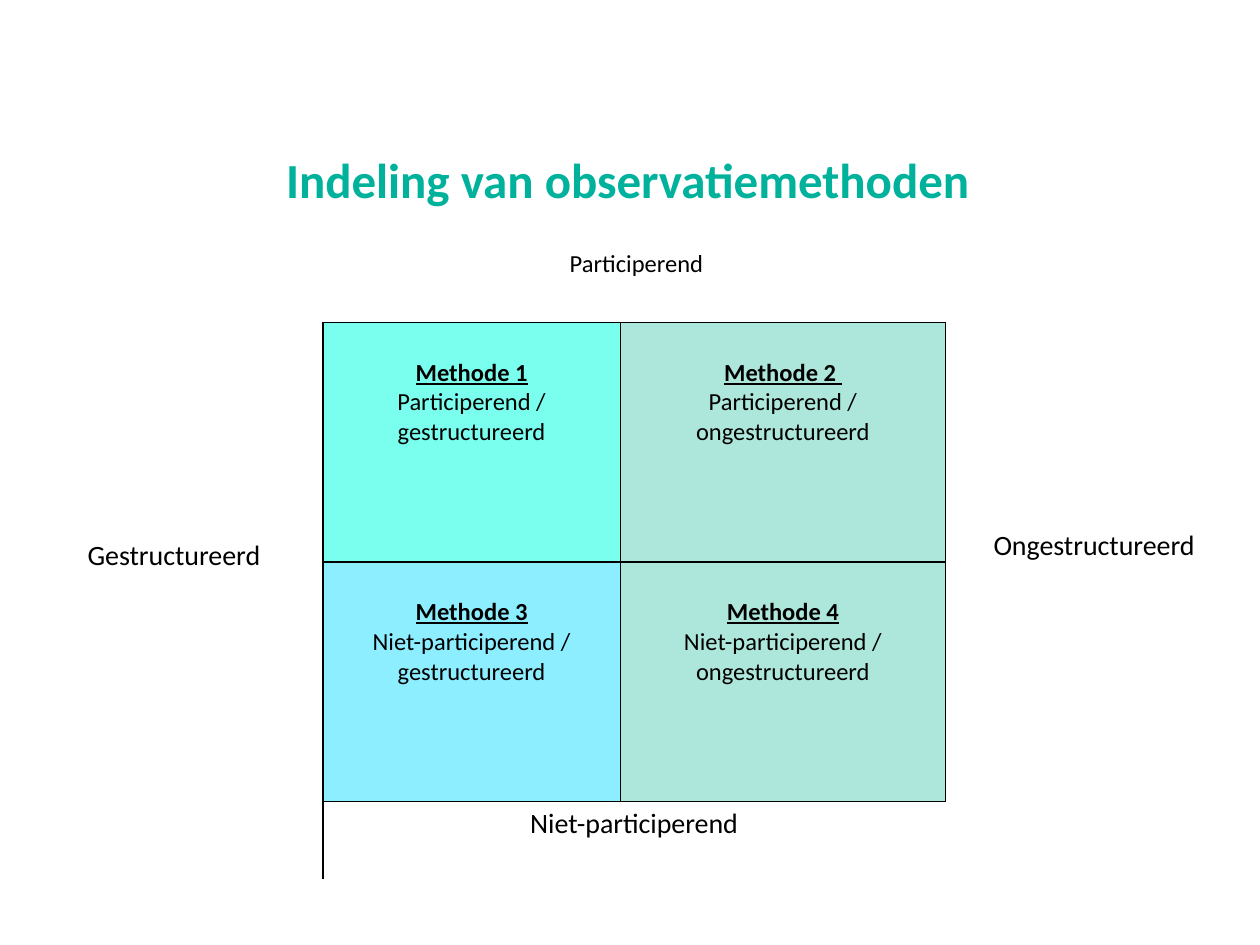
"""Build a slide with a two-by-two grid of observation methods."""
import pptx
import pptx.util
import pptx.dml.color
import pptx.enum.text
import pptx.oxml

Inches, Pt = pptx.util.Inches, pptx.util.Pt
ALIGN, ANCHOR = pptx.enum.text.PP_ALIGN, pptx.enum.text.MSO_ANCHOR
PLAIN = "{2D5ABB26-0587-4C30-8999-92F81FD0307C}"
LINE = (
    '<a:ln{0} xmlns:a="http://schemas.openxmlformats.org/drawingml/2006/main" w="12700">'
    '<a:solidFill><a:srgbClr val="000000"/></a:solidFill></a:ln{0}>'
)
METHODS = {
    (1, 1): ("Methode 1", "Participerend / gestructureerd", "7AFFEF", "LRTB"),
    (1, 2): ("Methode 2 ", "Participerend / ongestructureerd", "ADE6DA", "LTB"),
    (2, 1): ("Methode 3", "Niet-participerend / gestructureerd", "8DEEFF", "LRTB"),
    (2, 2): ("Methode 4", "Niet-participerend / ongestructureerd", "ADE6DA", "LTB"),
}


def color(code):
    """Turn a hex string into a colour."""
    return pptx.dml.color.RGBColor.from_string(code)


def apply(target, values):
    """Set attributes from a dict."""
    for name, value in values.items():
        setattr(target, name, value)


class Deck:
    """Hold the style and the current slide."""

    def __init__(self):
        """Start a deck with one titled slide."""
        self.show = pptx.Presentation()
        apply(self.show, {"slide_width": Inches(10), "slide_height": Inches(7.5)})
        self.slide = self.show.slides.add_slide(self.show.slide_layouts[5])

    def text(self, para, words, size, align=ALIGN.CENTER, ink="000000", **more):
        """Fill one formatted paragraph."""
        para.alignment = align
        run = para.add_run()
        run.text = words
        apply(run.font, {"name": "Calibri", "size": Pt(size), **more})
        run.font.color.rgb = color(ink)

    def title(self, words, left, top, width, height):
        """Place and fill the title."""
        box = self.slide.shapes.title
        apply(box, {"left": Inches(left), "top": Inches(top),
                    "width": Inches(width), "height": Inches(height)})
        apply(box.text_frame, {"vertical_anchor": ANCHOR.BOTTOM, "word_wrap": True})
        self.text(box.text_frame.paragraphs[0], words, 28, ALIGN.LEFT, "00B29C", bold=True)

    def table(self, left, top, width, rows, cols):
        """Add an unstyled table with equal columns."""
        table = self.slide.shapes.add_table(
            len(rows), cols, Inches(left), Inches(top), Inches(width), Inches(sum(rows))
        ).table
        table._tbl.tblPr[0].text = PLAIN
        apply(table, {"first_row": False, "horz_banding": False})
        for col in table.columns:
            col.width = Inches(width / cols)
        for row, height in zip(table.rows, rows):
            row.height = Inches(height)
        return table

    def cell(self, cell, edges="", fill=None, **pads):
        """Set the margins, borders and fill of a cell."""
        sides = {"left": 0.07, "right": 0.07, "top": 0.04, "bottom": 0.04, **pads}
        apply(cell, {f"margin_{side}": Inches(pad) for side, pad in sides.items()})
        for edge in edges:
            cell._tc.get_or_add_tcPr().append(pptx.oxml.parse_xml(LINE.format(edge)))
        if fill:
            cell.fill.solid()
            cell.fill.fore_color.rgb = color(fill)
        else:
            cell.fill.background()
        return cell.text_frame

    def label(self, table, start, end, words, size, anchor=ANCHOR.TOP, **style):
        """Merge cells into one axis label."""
        cell = table.cell(*start)
        cell.merge(table.cell(*end))
        frame = self.cell(cell, **style)
        cell.vertical_anchor = anchor
        self.text(frame.paragraphs[0], words, size)

    def method(self, cell, name, words, fill, edges):
        """Fill one cell of the grid."""
        frame = self.cell(cell, edges, fill, top=0.28)
        self.text(frame.paragraphs[0], name, 14, bold=True, underline=True)
        self.text(frame.add_paragraph(), words, 14)


def main():
    """Build and save the deck."""
    deck = Deck()
    deck.title("Indeling van observatiemethoden", 2.17, 0.52, 7.83, 1.18)
    grid = deck.table(0.2, 1.94, 9.45, [0.62, 1.9, 1.9, 0.62], 4)
    mid = ANCHOR.MIDDLE
    deck.label(grid, (0, 0), (0, 2), "Participerend", 14, left=2.47)
    deck.label(grid, (0, 3), (3, 3), "Ongestructureerd", 16, mid, bottom=0.3)
    deck.label(grid, (1, 0), (3, 0), "Gestructureerd", 16, mid, bottom=0.76, edges="R")
    deck.label(grid, (3, 1), (3, 2), "Niet-participerend", 16, edges="T")
    for place, method in METHODS.items():
        deck.method(grid.cell(*place), *method)
    deck.show.save("out.pptx")


if __name__ == "__main__":
    main()
